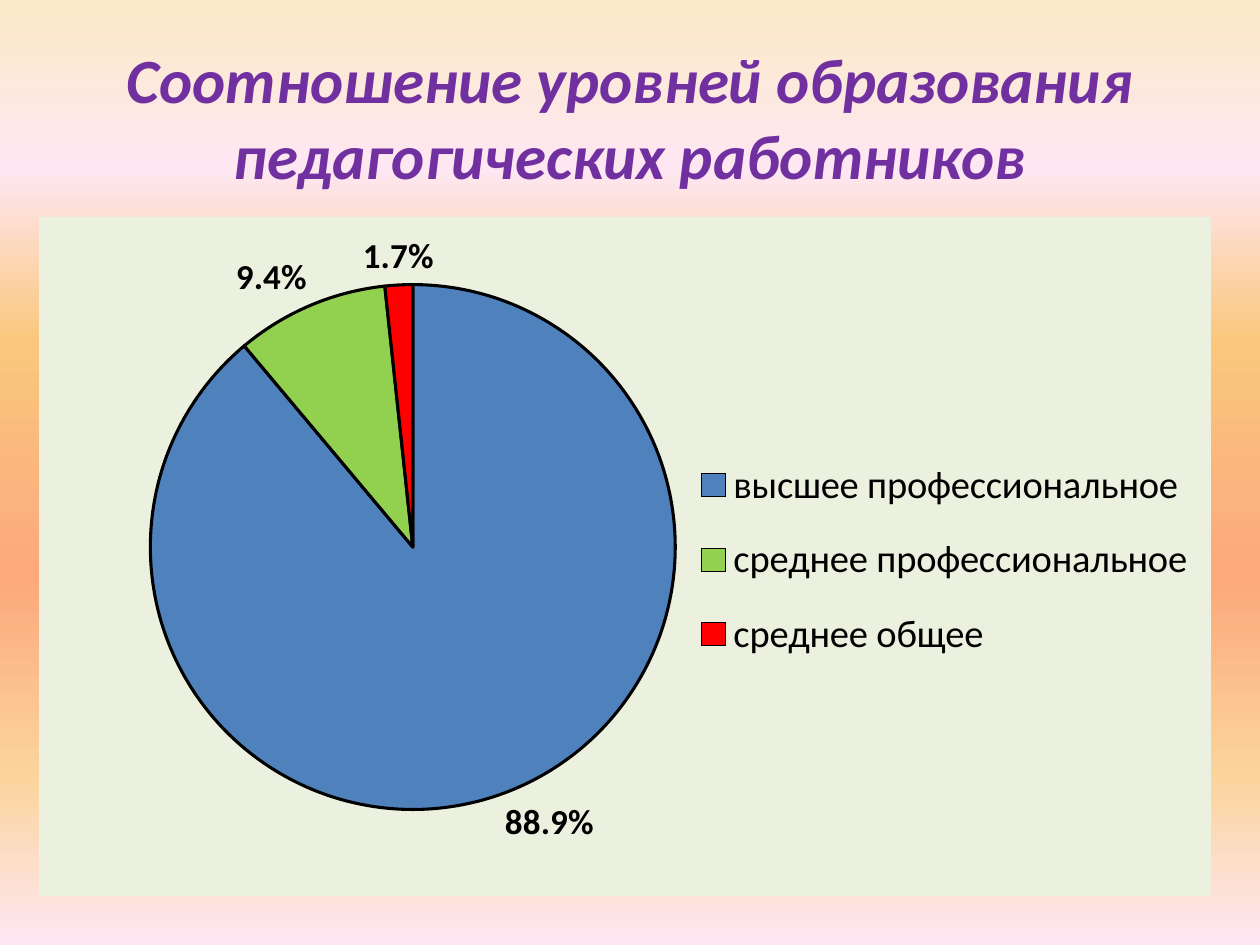
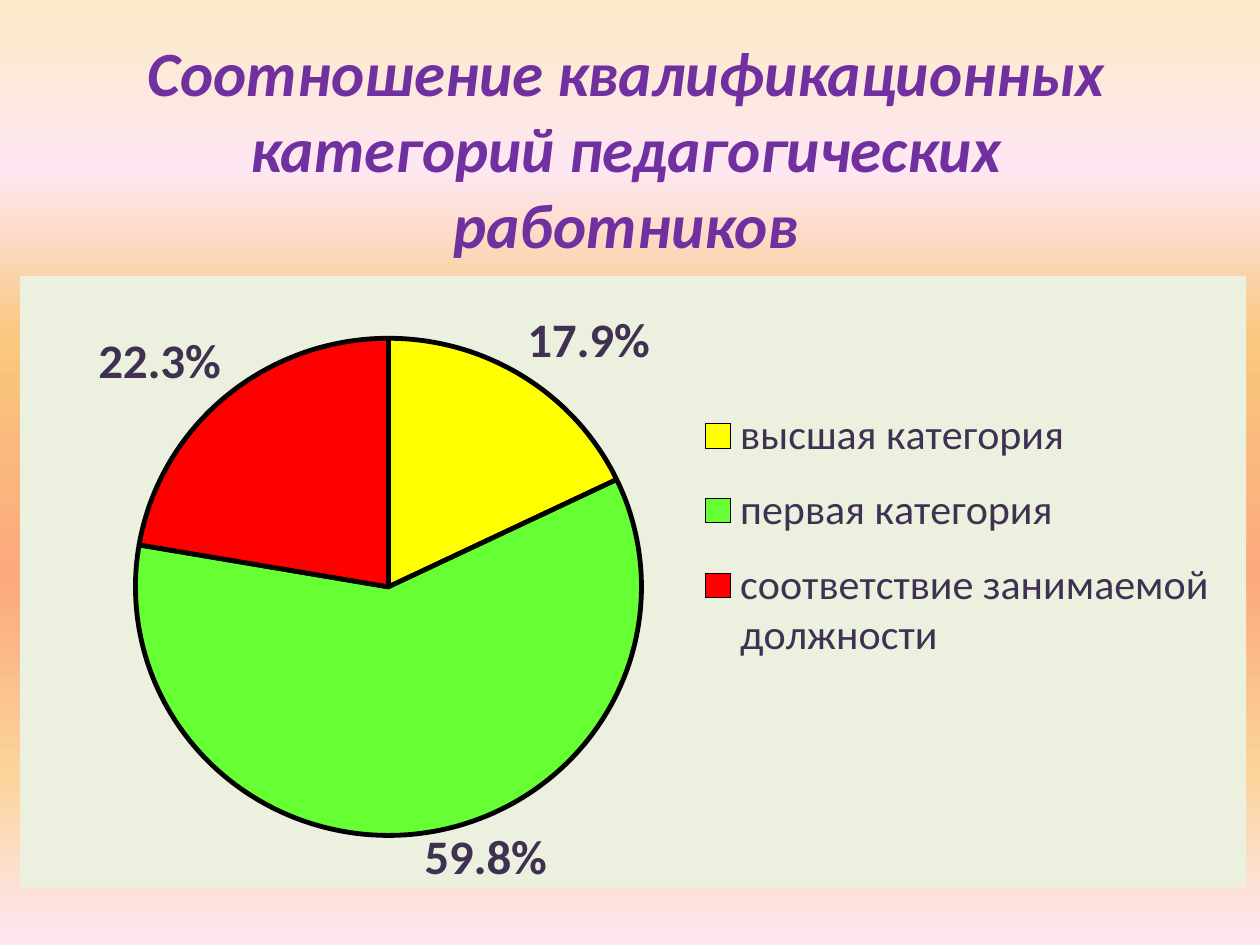
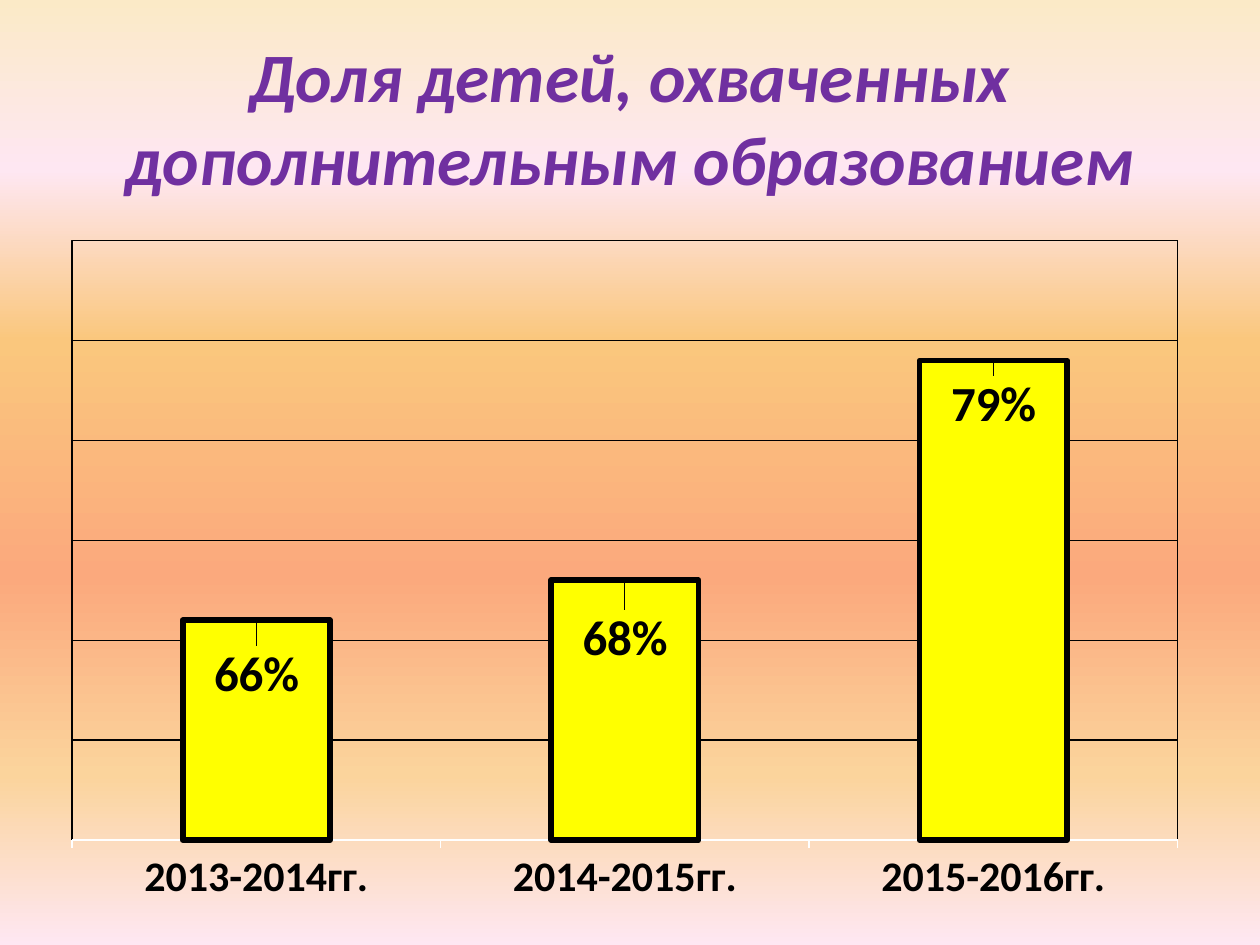
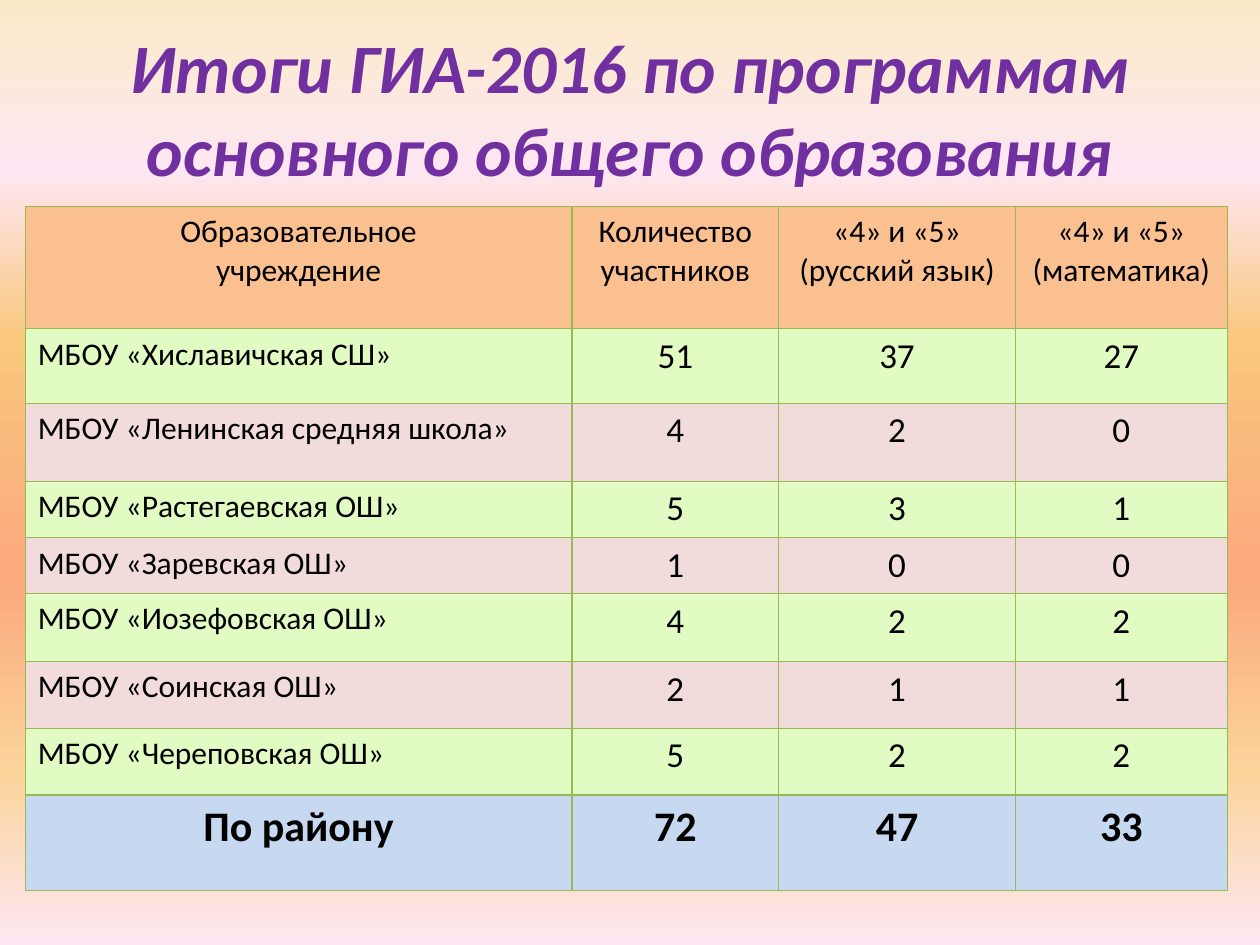
from lxml import etree
from pptx import Presentation
from pptx.chart.data import CategoryChartData
from pptx.dml.color import RGBColor
from pptx.enum.chart import (XL_CHART_TYPE, XL_LABEL_POSITION, XL_LEGEND_POSITION,
                             XL_TICK_LABEL_POSITION, XL_TICK_MARK)
from pptx.enum.text import MSO_ANCHOR, MSO_AUTO_SIZE, PP_ALIGN
from pptx.oxml import parse_xml
from pptx.oxml.ns import nsdecls, qn
from pptx.util import Inches, Pt

# Shared look
FONT = "Calibri"
BLACK = RGBColor(0x00, 0x00, 0x00)
WHITE = RGBColor(0xFF, 0xFF, 0xFF)
PURPLE = RGBColor(0x70, 0x30, 0xA0)
DARK_VIOLET = RGBColor(0x40, 0x31, 0x52)
PANEL = RGBColor(0xEB, 0xF1, 0xDE)
BLUE = RGBColor(0x4F, 0x81, 0xBD)
GREEN = RGBColor(0x92, 0xD0, 0x50)
LIME = RGBColor(0x66, 0xFF, 0x33)
RED = RGBColor(0xFF, 0x00, 0x00)
YELLOW = RGBColor(0xFF, 0xFF, 0x00)
HEADER_FILL = RGBColor(0xFA, 0xC0, 0x90)
ROW_FILLS = (RGBColor(0xE2, 0xFB, 0xC3), RGBColor(0xF2, 0xDC, 0xDB))
TOTAL_FILL = RGBColor(0xC6, 0xD9, 0xF1)
BORDER = RGBColor(0x98, 0xB9, 0x55)
BACKGROUND_STOPS = [
    (0, "FBEAC7"), (18, "FEE7F2"), (36, "FAC77D"),
    (61, "FBA97D"), (82, "FBD49C"), (100, "FEE7F2"),
]

# Content: boxes are left, top, width, height in inches; layouts are chart fractions
PIE_SLIDES = [
    {
        "title": "Соотношение уровней образования педагогических работников",
        "title_box": (0.5, 0.3, 9, 1.25),
        "box": (0.31, 1.72, 9.3, 5.39),
        "slices": [("высшее профессиональное", 0.889, BLUE),
                   ("среднее профессиональное", 0.094, GREEN),
                   ("среднее общее", 0.017, RED)],
        "plot": (0.087, 0.1, 0.464, 0.773),
        "legend": (0.566, 0.32, 0.42, 0.37),
        "line": 1.75,
        "legend_font": {"size": Pt(22), "color": BLACK},
        "label_font": {"size": Pt(20), "color": BLACK, "bold": True},
    },
    {
        "title": "Соотношение квалификационных категорий педагогических работников",
        "title_box": (0.47, 0.31, 9, 1.72),
        "box": (0.16, 2.19, 9.73, 4.94),
        "slices": [("высшая категория", 0.179, YELLOW),
                   ("первая категория", 0.598, LIME),
                   ("соответствие занимаемой должности", 0.223, RED)],
        "plot": (0.087, 0.102, 0.427, 0.813),
        "legend": (0.552, 0.18, 0.425, 0.49),
        "line": 2.75,
        "legend_font": {"size": Pt(24), "color": DARK_VIOLET},
        "label_font": {"size": Pt(28), "color": DARK_VIOLET, "bold": True},
    },
]
COVERAGE = {
    "title": "Доля детей, охваченных дополнительным образованием",
    "title_box": (0.5, 0.3, 9, 1.25),
    "box": (0.39, 1.8, 9.14, 5.47),
    "plot": (0.02, 0.02, 0.96, 0.87),
    "years": [("2013-2014гг.", 0.66), ("2014-2015гг.", 0.68), ("2015-2016гг.", 0.79)],
    "label_shifts": [0.13, 0.135, 0.115],
}
EXAM = {
    "title": "Итоги ГИА-2016 по программам основного общего образования",
    "title_box": (0.5, 0.3, 9, 1.11),
    "box": (0.2, 1.64, 9.53, 5.44),
    "columns": [4.34, 1.64, 1.88, 1.68],
    "heights": [0.97, 0.59, 0.62, 0.45, 0.41, 0.54, 0.53, 0.53, 0.76],
    "rows": [
        ("Образовательное\nучреждение", "Количество участников",
         "«4» и «5» (русский язык)", "«4» и «5» (математика)"),
        ("МБОУ «Хиславичская СШ»", 51, 37, 27),
        ("МБОУ «Ленинская средняя школа»", 4, 2, 0),
        ("МБОУ «Растегаевская ОШ»", 5, 3, 1),
        ("МБОУ «Заревская ОШ»", 1, 0, 0),
        ("МБОУ «Иозефовская ОШ»", 4, 2, 2),
        ("МБОУ «Соинская ОШ»", 2, 1, 1),
        ("МБОУ «Череповская ОШ»", 5, 2, 2),
        ("По району", 72, 47, 33),
    ],
}


# Helpers
def inches(values):
    return [Inches(value) for value in values]


def format_font(font, **values):
    for name, value in {"name": FONT, **values}.items():
        if name == "color":
            font.color.rgb = value
        else:
            setattr(font, name, value)


def format_line(line, color, width):
    line.color.rgb = color
    line.width = Pt(width)


def set_background(master):
    fill = master.background.fill
    fill.gradient()
    fill.gradient_angle = 270
    stops = master.element.find(".//" + qn("p:bg")).find(".//" + qn("a:gsLst"))
    for stop in list(stops):
        stops.remove(stop)
    for percent, color in BACKGROUND_STOPS:
        stop = etree.SubElement(stops, qn("a:gs"), pos=str(percent * 1000))
        etree.SubElement(stop, qn("a:srgbClr"), val=color)


def add_titled_slide(presentation, content, size):
    slide = presentation.slides.add_slide(presentation.slide_layouts[5])
    title = slide.shapes.title
    title.left, title.top, title.width, title.height = inches(content["title_box"])
    frame = title.text_frame
    frame.text = content["title"]
    frame.auto_size = MSO_AUTO_SIZE.NONE
    frame.vertical_anchor = MSO_ANCHOR.MIDDLE
    paragraph = frame.paragraphs[0]
    paragraph.alignment = PP_ALIGN.CENTER
    format_font(paragraph.runs[0].font, size=Pt(size), color=PURPLE, bold=True, italic=True)
    return slide


def set_layout(parent, index, values):
    """Place a chart part by hand; a position without a size is an offset."""
    for old in parent.findall(qn("c:layout")):
        parent.remove(old)
    layout = etree.Element(qn("c:layout"))
    manual = etree.SubElement(layout, qn("c:manualLayout"))
    if parent.tag == qn("c:plotArea"):
        etree.SubElement(manual, qn("c:layoutTarget"), val="inner")
    if len(values) == 4:
        for mode in ("xMode", "yMode"):
            etree.SubElement(manual, qn("c:" + mode), val="edge")
    for name, value in zip("xywh", values):
        etree.SubElement(manual, qn("c:" + name), val=str(value))
    parent.insert(index, layout)


def shape_properties(fill, line):
    return parse_xml(f'<c:spPr {nsdecls("c", "a")}>{fill}<a:ln w="9525">{line}</a:ln></c:spPr>')


def solid(color):
    return f'<a:solidFill><a:srgbClr val="{color}"/></a:solidFill>'


def add_chart(slide, kind, content, points, number_format, label_font, area_fill):
    data = CategoryChartData(number_format=number_format)
    data.categories = [point[0] for point in points]
    data.add_series("Series 1", [point[1] for point in points])
    chart = slide.shapes.add_chart(kind, *inches(content["box"]), data).chart
    chart.has_title = False
    chart.has_legend = False
    format_font(chart.font, size=Pt(10), color=WHITE)
    chart.font._element.getparent()
    text = chart.element.find(qn("c:txPr"))
    text.addprevious(shape_properties(area_fill, "<a:noFill/>"))
    set_layout(chart.element.find(".//" + qn("c:plotArea")), 0, content["plot"])

    plot = chart.plots[0]
    plot.has_data_labels = True
    series = plot.series[0]
    labels = series.data_labels
    labels.show_value = True
    labels.show_percentage = False
    labels.number_format = number_format
    labels.number_format_is_linked = False
    labels.position = XL_LABEL_POSITION.OUTSIDE_END
    format_font(labels.font, **label_font)
    return chart, plot, series


def add_pie_slide(presentation, content):
    slide = add_titled_slide(presentation, content, 36)
    chart, plot, series = add_chart(
        slide, XL_CHART_TYPE.PIE, content, content["slices"], "0.0%",
        content["label_font"], solid(PANEL))
    plot.vary_by_categories = True
    format_line(series.format.line, BLACK, content["line"])
    for index, (_, _, color) in enumerate(content["slices"]):
        point_format = series.points[index].format
        point_format.fill.solid()
        point_format.fill.fore_color.rgb = color
        format_line(point_format.line, BLACK, content["line"])

    chart.has_legend = True
    legend = chart.legend
    legend.position = XL_LEGEND_POSITION.RIGHT
    legend.include_in_layout = False
    format_font(legend.font, **content["legend_font"])
    set_layout(chart.element.find(".//" + qn("c:legend")), 1, content["legend"])


def add_coverage_slide(presentation, content):
    slide = add_titled_slide(presentation, content, 39.6)
    label_font = {"size": Pt(28), "color": BLACK, "bold": True}
    chart, plot, series = add_chart(
        slide, XL_CHART_TYPE.COLUMN_CLUSTERED, content, content["years"], "0%",
        label_font, "<a:noFill/>")
    plot.vary_by_categories = False
    plot.gap_width = 150
    series.format.fill.solid()
    series.format.fill.fore_color.rgb = YELLOW
    format_line(series.format.line, BLACK, 3.25)

    # Labels are shifted down into the columns
    for index, shift in enumerate(content["label_shifts"]):
        label = series.points[index].data_label
        format_font(label.font, **label_font)
        label.position = XL_LABEL_POSITION.OUTSIDE_END
    for label, shift in zip(chart.element.iter(qn("c:dLbl")), content["label_shifts"]):
        set_layout(label, 1, (0, shift))

    # Axes and plot frame
    values = chart.value_axis
    values.minimum_scale, values.maximum_scale, values.major_unit = 0.55, 0.85, 0.05
    values.has_major_gridlines = True
    format_line(values.major_gridlines.format.line, BLACK, 0.75)
    values.tick_labels.number_format = "0%"
    values.tick_labels.number_format_is_linked = False
    values.visible = False
    categories = chart.category_axis
    categories.major_tick_mark = XL_TICK_MARK.OUTSIDE
    categories.tick_label_position = XL_TICK_LABEL_POSITION.LOW
    format_line(categories.format.line, WHITE, 0.75)
    format_font(categories.tick_labels.font, size=Pt(24), color=BLACK, bold=True)
    chart.element.find(".//" + qn("c:plotArea")).append(
        shape_properties("<a:noFill/>", solid(BLACK)))


def set_borders(cell):
    properties = cell._tc.get_or_add_tcPr()
    for index, side in enumerate(("lnL", "lnR", "lnT", "lnB")):
        properties.insert(index, parse_xml(
            f'<a:{side} {nsdecls("a")} w="9525">{solid(BORDER)}</a:{side}>'))


def add_exam_slide(presentation, content):
    slide = add_titled_slide(presentation, content, 39.6)
    rows = content["rows"]
    last = len(rows) - 1
    table = slide.shapes.add_table(
        len(rows), len(content["columns"]), *inches(content["box"])).table
    for column, width in zip(table.columns, content["columns"]):
        column.width = Inches(width)
    for row, height in zip(table.rows, content["heights"]):
        row.height = Inches(height)

    for row_index, row in enumerate(rows):
        is_body = 0 < row_index < last
        if is_body:
            fill = ROW_FILLS[(row_index - 1) % 2]
        else:
            fill = TOTAL_FILL if row_index == last else HEADER_FILL
        for column_index, value in enumerate(row):
            cell = table.cell(row_index, column_index)
            cell.text = str(value)
            cell.fill.solid()
            cell.fill.fore_color.rgb = fill
            set_borders(cell)
            is_name = is_body and column_index == 0
            size = 24 if row_index == last else 20 if is_body and not is_name else 18
            for paragraph in cell.text_frame.paragraphs:
                paragraph.alignment = PP_ALIGN.LEFT if is_name else PP_ALIGN.CENTER
                format_font(paragraph.runs[0].font, size=Pt(size), color=BLACK,
                            bold=row_index == last)


def main():
    presentation = Presentation()
    presentation.slide_width, presentation.slide_height = Inches(10), Inches(7.5)
    set_background(presentation.slide_master)
    for content in PIE_SLIDES:
        add_pie_slide(presentation, content)
    add_coverage_slide(presentation, COVERAGE)
    add_exam_slide(presentation, EXAM)
    presentation.save("out.pptx")


if __name__ == "__main__":
    main()
